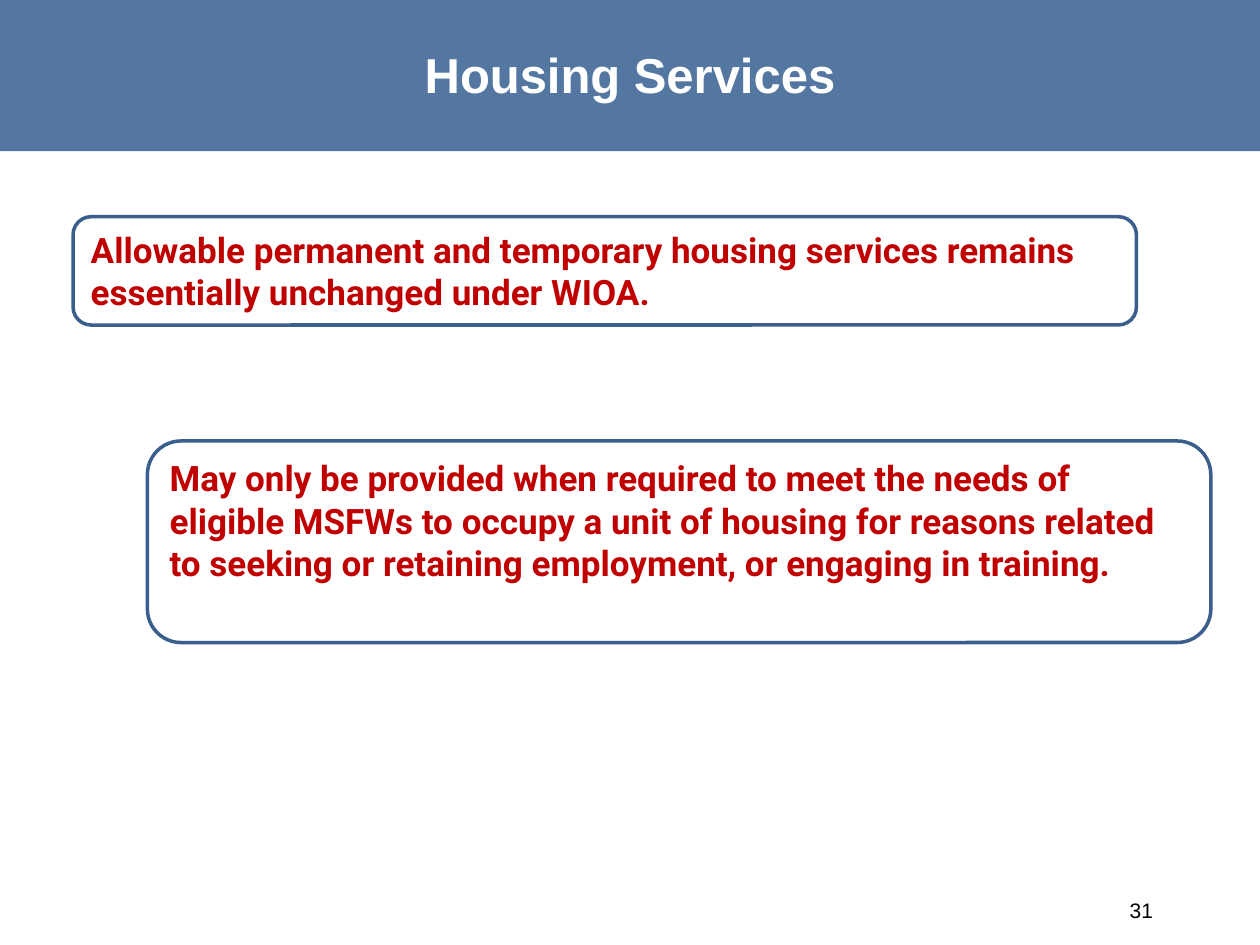
"""Build the Housing Services slide: a title banner and two staggered callouts."""
from dataclasses import dataclass

from lxml import etree
from pptx import Presentation
from pptx import util as u
from pptx.dml.color import RGBColor
from pptx.enum import shapes, text
from pptx.oxml.ns import qn

WIDTH, HEIGHT = 10, 7.5
COLORS = {
    "banner": "376092",
    "border": "3A5F8C",
    "callout": "C00000",
    "white": "FFFFFF",
    "black": "000000",
}


@dataclass(frozen=True)
class Box:
    """Position and size as shares of the slide."""

    x: float
    y: float
    w: float
    h: float

    def emu(self) -> tuple:
        """Return left, top, width and height as lengths."""
        return (u.Inches(self.x * WIDTH), u.Inches(self.y * HEIGHT),
                u.Inches(self.w * WIDTH), u.Inches(self.h * HEIGHT))


@dataclass(frozen=True)
class Callout:
    """A rounded box with its wording."""

    box: Box
    words: str


CALLOUT_WIDTH = 0.844
CALLOUTS = (
    Callout(Box(0.058, 1.72 / HEIGHT, CALLOUT_WIDTH, 0.86 / HEIGHT),
            "Allowable permanent and temporary housing services remains "
            "essentially unchanged under WIOA."),
    Callout(Box(0.117, 3.5 / HEIGHT, CALLOUT_WIDTH, 1.6 / HEIGHT),
            "May only be provided when required to meet the needs of eligible "
            "MSFWs to occupy a unit of housing for reasons related to seeking "
            "or retaining employment, or engaging in training."),
)


def rgb(name: str) -> RGBColor:
    """Look up a named colour."""
    return RGBColor.from_string(COLORS[name])


def write(sp, words: str, *, size: float, color: str, font: str = "Arial",
          bold: bool = False, align=text.PP_ALIGN.LEFT,
          anchor=text.MSO_ANCHOR.MIDDLE) -> None:
    """Put one formatted paragraph into a shape."""
    tf = sp.text_frame
    tf.word_wrap = True
    tf.auto_size = text.MSO_AUTO_SIZE.NONE
    tf.vertical_anchor = anchor
    p = tf.paragraphs[0]
    p.alignment = align
    r = p.add_run()
    r.text = words
    r.font.name, r.font.size, r.font.bold = font, u.Pt(size), bold
    r.font.color.rgb = rgb(color)


def add_box(s, kind, box: Box, fill: str):
    """Add a filled preset shape without shadow or line."""
    sp = s.shapes.add_shape(kind, *box.emu())
    sp.shadow.inherit = False
    sp.fill.solid()
    sp.fill.fore_color.rgb = rgb(fill)
    sp.line.fill.background()
    return sp


def add_title(s, words: str) -> None:
    """Set the title over a translucent banner."""
    title = s.shapes.title
    title.left, title.top, title.width, title.height = Box(
        0, 0, 1, 1.17 / HEIGHT).emu()
    write(title, words, size=28, color="white", bold=True,
          align=text.PP_ALIGN.CENTER)
    banner = add_box(s, shapes.MSO_SHAPE.RECTANGLE,
                     Box(-0.001, 0, 1.001, 0.16), "banner")
    tint = banner._element.spPr.find(qn("a:solidFill"))[0]
    etree.SubElement(tint, qn("a:alpha")).set("val", "85000")
    title._element.addprevious(banner._element)


def add_callout(s, callout: Callout) -> None:
    """Draw one outlined callout."""
    sp = add_box(s, shapes.MSO_SHAPE.ROUNDED_RECTANGLE, callout.box, "white")
    sp.line.color.rgb = rgb("border")
    sp.line.width = u.Pt(2)
    write(sp, callout.words, size=20, color="callout", font="Roboto",
          bold=True, anchor=text.MSO_ANCHOR.TOP)


def main() -> None:
    """Assemble and save the slide."""
    prs = Presentation()
    prs.slide_width, prs.slide_height = u.Inches(WIDTH), u.Inches(HEIGHT)
    s = prs.slides.add_slide(prs.slide_layouts.get_by_name("Title Only"))
    add_title(s, "Housing Services")
    number = s.shapes.add_textbox(
        *Box(0.692, 7.02 / HEIGHT, 0.233, 0.4 / HEIGHT).emu())
    write(number, "31", size=12, color="black", align=text.PP_ALIGN.RIGHT)
    for callout in CALLOUTS:
        add_callout(s, callout)
    prs.save("out.pptx")


if __name__ == "__main__":
    main()
